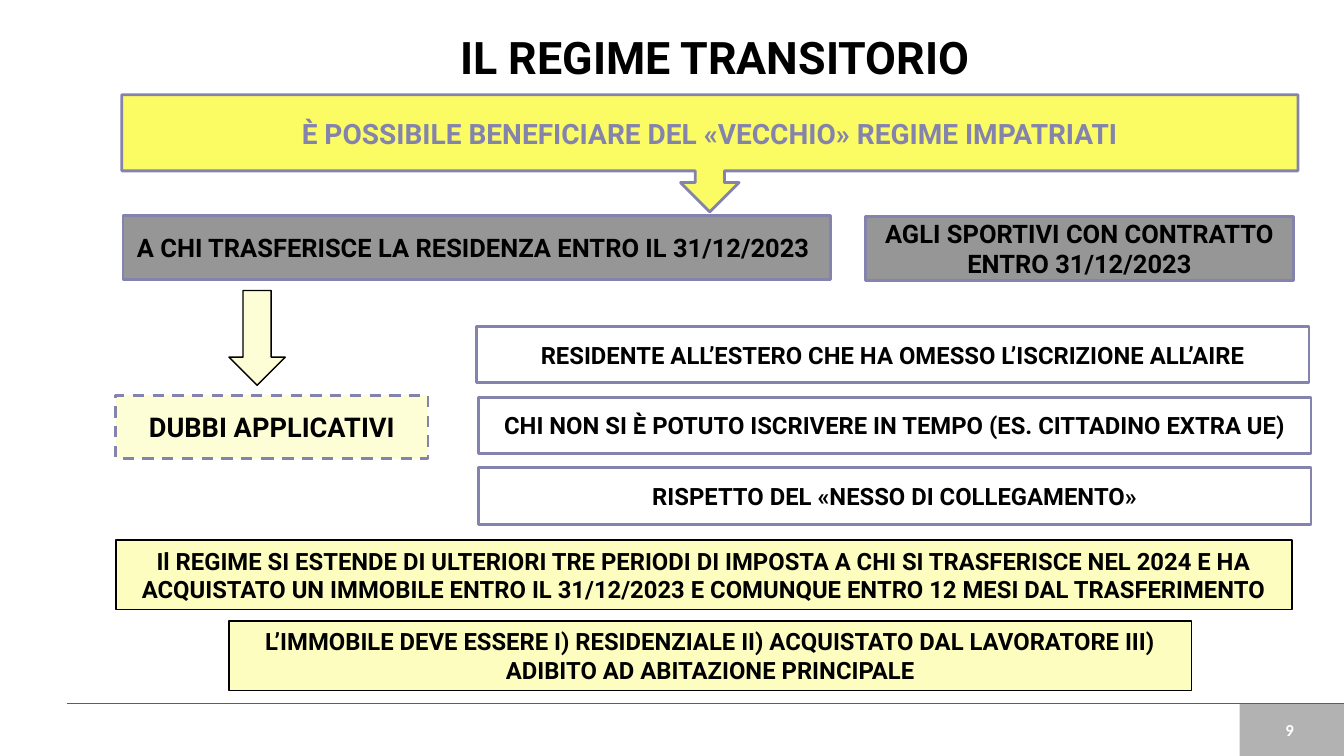
from lxml.etree import SubElement
from pptx import Presentation
from pptx.dml.color import RGBColor
from pptx.enum.dml import MSO_LINE
from pptx.enum.shapes import MSO_CONNECTOR, MSO_SHAPE as Shape
from pptx.enum.text import MSO_ANCHOR, PP_ALIGN
from pptx.oxml.ns import qn
from pptx.util import Cm, Pt

BLACK = RGBColor(0x00, 0x00, 0x00)
WHITE = RGBColor(0xFF, 0xFF, 0xFF)
LILAC = RGBColor(0x83, 0x83, 0xAD)
NAVY = RGBColor(0x59, 0x59, 0x88)
GRAY = RGBColor(0x96, 0x96, 0x96)
YELLOW = RGBColor(0xFB, 0xFB, 0x64)
CREAM = RGBColor(0xFD, 0xFD, 0xBF)
IVORY = RGBColor(0xFE, 0xFE, 0xD6)

DOUBTS = [
    (12.01, "RESIDENTE ALL’ESTERO CHE HA OMESSO L’ISCRIZIONE ALL’AIRE"),
    (12.06, "CHI NON SI È POTUTO ISCRIVERE IN TEMPO (ES. CITTADINO EXTRA UE)"),
    (12.06, "RISPETTO DEL «NESSO DI COLLEGAMENTO»"),
]


def write_text(shape, text, size, color=BLACK, font="Roboto"):
    frame = shape.text_frame
    frame.word_wrap = True
    frame.vertical_anchor = MSO_ANCHOR.MIDDLE
    frame.margin_left = frame.margin_right = 0
    frame.margin_top = frame.margin_bottom = 0
    frame.text = text
    para = frame.paragraphs[0]
    para.alignment = PP_ALIGN.CENTER
    span = para.runs[0]
    span.font.name = font
    span.font.size = Pt(size)
    span.font.bold = True
    span.font.color.rgb = color


def add_label(page, place, text, size, color=BLACK, font="Roboto"):
    box = page.shapes.add_textbox(*map(Cm, place))
    write_text(box, text, size, color, font)


def add_block(page, place, fill=None, line=None, width=2, kind=Shape.RECTANGLE):
    block = page.shapes.add_shape(kind, *map(Cm, place))
    block.shadow.inherit = False
    if fill is None:
        block.fill.background()
    else:
        block.fill.solid()
        block.fill.fore_color.rgb = fill
    if line is None:
        block.line.fill.background()
    else:
        block.line.color.rgb = line
        block.line.width = Pt(width)
    return block


def add_footer(page):
    corner = add_block(page, (31.24, 17.73, 2.63, 1.32), BLACK)
    color = corner.fill._xPr.find(qn("a:solidFill"))[0]
    SubElement(color, qn("a:alpha"), val="30000")
    add_label(page, (31.14, 17.73, 2.72, 1.32), "9", 12, WHITE, "Calibri")
    rule = page.shapes.add_connector(
        MSO_CONNECTOR.STRAIGHT, Cm(1.68), Cm(17.73), Cm(33.87), Cm(17.73))
    rule.line.color.rgb = NAVY
    rule.line.width = Pt(1)
    SubElement(rule._element.spPr, qn("a:effectLst"))


def main():
    deck = Presentation()
    deck.slide_width, deck.slide_height = Cm(33.87), Cm(19.05)
    page = deck.slides.add_slide(deck.slide_layouts[6])
    add_footer(page)

    # Title and main statement
    add_label(page, (2.18, 0.66, 31.69, 1.52), "IL REGIME TRANSITORIO", 32)
    statement = add_block(page, (3.07, 2.39, 29.64, 2.95), YELLOW, LILAC,
                          kind=Shape.DOWN_ARROW_CALLOUT)
    write_text(statement,
               "È POSSIBILE BENEFICIARE DEL «VECCHIO» REGIME IMPATRIATI",
               20, LILAC)

    # Who benefits
    residents = add_block(page, (3.1, 5.44, 17.83, 1.6), GRAY, LILAC)
    write_text(residents,
               "A CHI TRASFERISCE LA RESIDENZA ENTRO IL 31/12/2023 ", 18.2)
    athletes = add_block(page, (21.82, 5.46, 10.77, 1.6), GRAY, LILAC)
    write_text(athletes, "AGLI SPORTIVI CON CONTRATTO ENTRO 31/12/2023", 18.2)

    # Doubts
    add_block(page, (5.77, 7.32, 1.42, 2.39), IVORY, BLACK, 1, Shape.DOWN_ARROW)
    heading = add_block(page, (2.92, 9.96, 7.87, 1.6), IVORY, LILAC)
    heading.line.dash_style = MSO_LINE.DASH
    write_text(heading, "DUBBI APPLICATIVI", 19.4)
    for row, (left, text) in enumerate(DOUBTS):
        doubt = add_block(page, (left, 8.23 + 1.78 * row, 20.98, 1.42),
                          line=LILAC)
        write_text(doubt, text, 17)

    # Extension of the regime
    extension = add_block(page, (2.92, 13.61, 29.64, 1.75), CREAM, BLACK, 1)
    write_text(extension,
               "Il REGIME SI ESTENDE DI ULTERIORI TRE PERIODI DI IMPOSTA A CHI "
               "SI TRASFERISCE NEL 2024 E HA ACQUISTATO UN IMMOBILE ENTRO IL "
               "31/12/2023 E COMUNQUE ENTRO 12 MESI DAL TRASFERIMENTO", 17)
    property_rule = add_block(page, (5.77, 15.65, 24.26, 1.75), CREAM, BLACK, 1)
    write_text(property_rule,
               "L’IMMOBILE DEVE ESSERE I) RESIDENZIALE II) ACQUISTATO DAL "
               "LAVORATORE III) ADIBITO AD ABITAZIONE PRINCIPALE", 17)

    deck.save("out.pptx")


if __name__ == "__main__":
    main()
